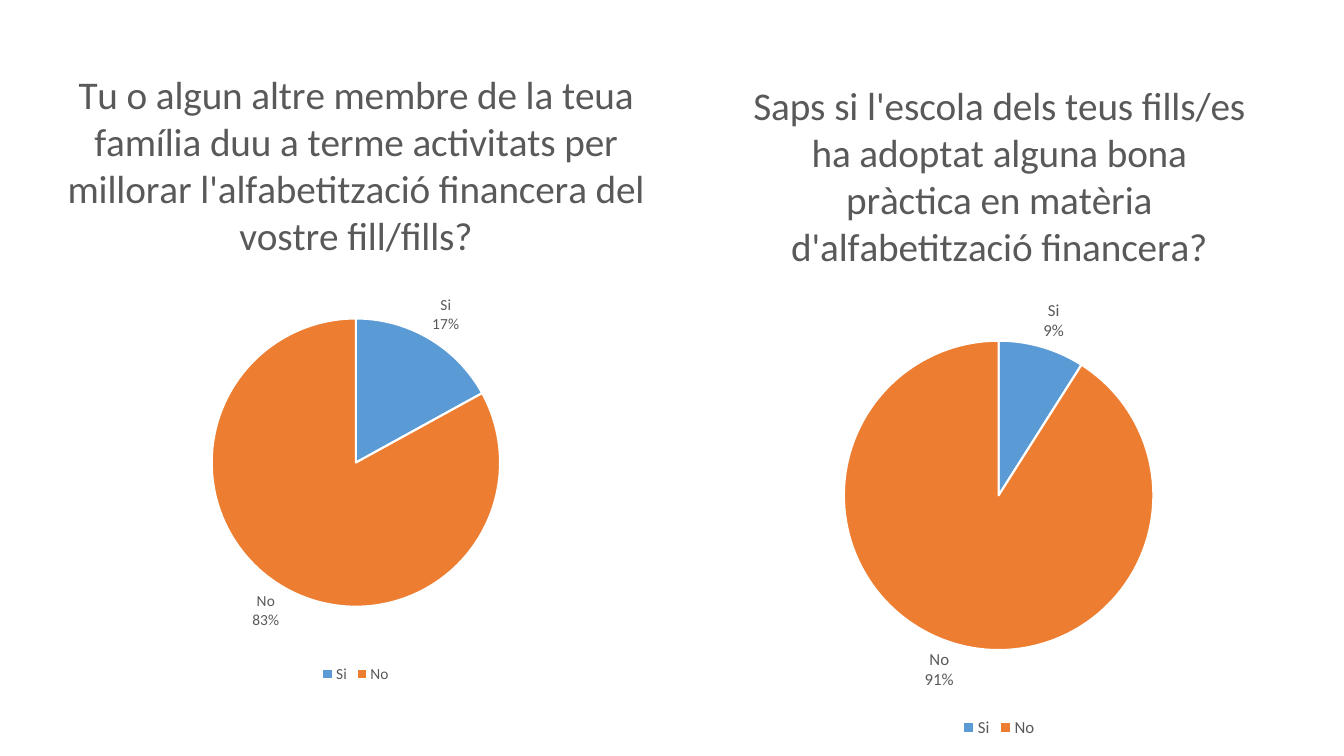
"""Build a slide with two pie charts of survey answers on financial literacy."""
from lxml import etree
from pptx import Presentation
from pptx.chart.data import CategoryChartData
from pptx.dml.color import RGBColor
from pptx.enum.chart import XL_CHART_TYPE, XL_LABEL_POSITION, XL_LEGEND_POSITION
from pptx.oxml.ns import qn
from pptx.util import Inches, Pt

PIE = XL_CHART_TYPE.PIE
OUTSIDE = XL_LABEL_POSITION.OUTSIDE_END
BOTTOM = XL_LEGEND_POSITION.BOTTOM
GREY = "595959"
SLICE_COLOURS = ["5B9BD5", "ED7D31"]


def color(value):
    return RGBColor.from_string(value)


def style(font, size):
    font.name = "Calibri"
    font.size = Pt(size)
    font.bold = False
    font.color.rgb = color(GREY)


deck = Presentation()
deck.slide_width = Inches(13.33)
deck.slide_height = Inches(7.5)
page = deck.slides.add_slide(deck.slide_layouts[6])

# question, answers, chart frame, pie square (left, top, side), label size
surveys = [
    ("Tu o algun altre membre de la teua família duu a terme activitats per "
     "millorar l'alfabetització financera del vostre fill/fills?",
     (17, 83), (-0.21, 0.42, 7.48, 6.4), (2.1, 3.16, 2.86), 11),
    ("Saps si l'escola dels teus fills/es ha adoptat alguna bona pràctica "
     "en matèria d'alfabetització financera?",
     (9, 91), (6.67, 0.52, 6.48, 6.84), (8.37, 3.38, 3.07), 12),
]

for question, answers, frame, (pie_left, pie_top, side), label_size in surveys:
    data = CategoryChartData()
    data.categories = ["Si", "No"]
    data.add_series("Series 1", answers)
    left, top, width, height = frame
    chart = page.shapes.add_chart(PIE, *map(Inches, frame), data).chart
    style(chart.font, 10)

    chart.has_title = True
    title = chart.chart_title.text_frame
    title.text = question
    style(title.paragraphs[0].runs[0].font, 28)

    chart.has_legend = True
    chart.legend.position = BOTTOM
    chart.legend.include_in_layout = False
    style(chart.legend.font, label_size)

    plot = chart.plots[0]
    plot.vary_by_categories = True
    for index, fill_colour in enumerate(SLICE_COLOURS):
        form = plot.series[0].points[index].format
        form.fill.solid()
        form.fill.fore_color.rgb = color(fill_colour)
        form.line.color.rgb = color("FFFFFF")
        form.line.width = Pt(1.5)

    plot.has_data_labels = True
    labels = plot.data_labels
    labels.show_category_name = True
    labels.show_percentage = True
    labels.show_value = False
    labels.number_format = "0%"
    labels.number_format_is_linked = False
    labels.position = OUTSIDE
    style(labels.font, label_size)

    area = chart.element.find(".//" + qn("c:plotArea"))
    for old_layout in area.findall(qn("c:layout")):
        area.remove(old_layout)
    layout = etree.Element(qn("c:layout"))
    area.insert(0, layout)
    manual = etree.SubElement(layout, qn("c:manualLayout"))
    settings = [
        ("layoutTarget", "inner"), ("xMode", "edge"), ("yMode", "edge"),
        ("x", (pie_left - left) / width), ("y", (pie_top - top) / height),
        ("w", side / width), ("h", side / height),
    ]
    for tag, value in settings:
        etree.SubElement(manual, qn("c:" + tag)).set("val", str(value))

deck.save("out.pptx")
